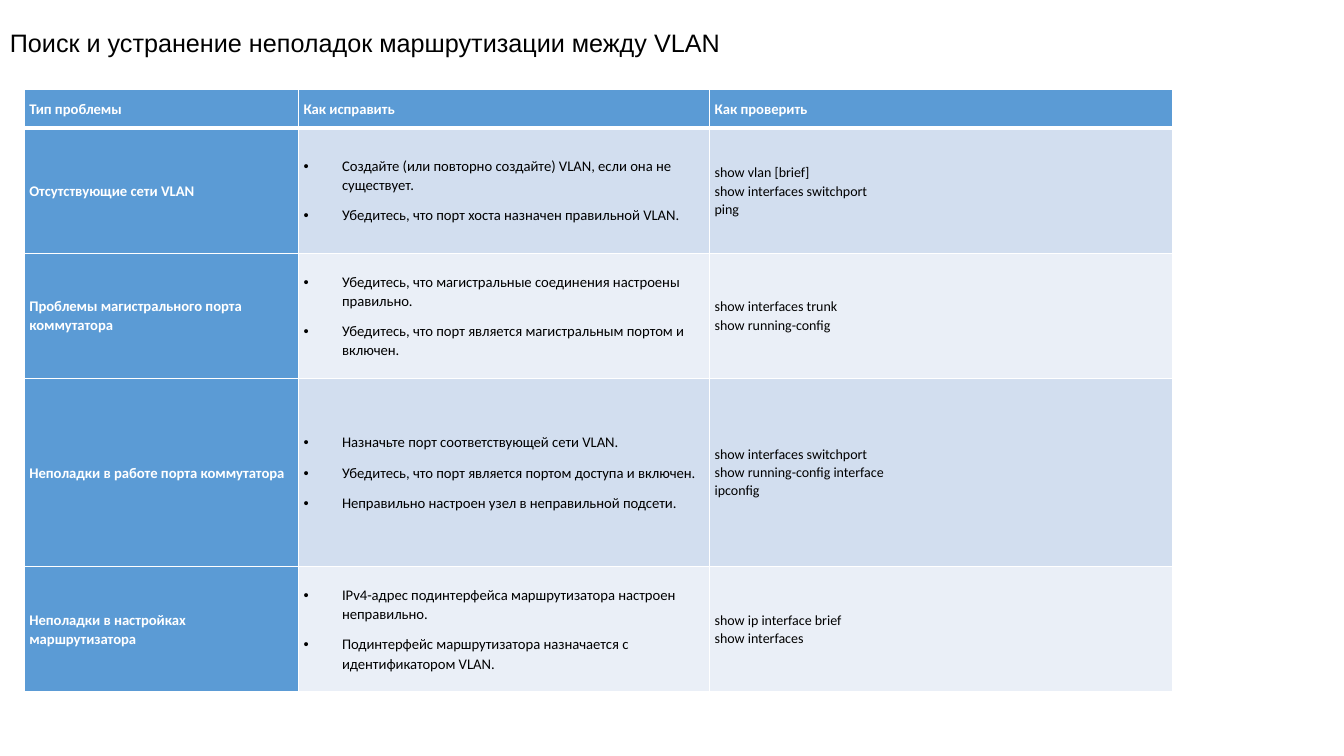
from lxml.etree import SubElement
from pptx import Presentation
from pptx.dml.color import RGBColor
from pptx.enum.text import MSO_ANCHOR as Anchor, MSO_AUTO_SIZE as AutoSize
from pptx.oxml.ns import qn
from pptx.util import Cm, Pt

COLORS = {
    "black": "000000",
    "white": "FFFFFF",
    "head": "5B9BD5",
    "odd": "D2DEEF",
    "even": "EAEFF7",
}
LINE_SPACING = 1.07
COLUMN_WIDTHS = [6.91, 10.36, 11.66]
ROW_HEIGHTS = [0.97, 3.15, 3.15, 4.75, 3.15]

TITLE = "Поиск и устранение неполадок маршрутизации между VLAN"
HEADINGS = ["Тип проблемы", "Как исправить", "Как проверить"]
PROBLEMS = [
    ("Отсутствующие сети VLAN",
     ["Создайте (или повторно создайте) VLAN, если она не существует.",
      "Убедитесь, что порт хоста назначен правильной VLAN."],
     ["show vlan [brief]", "show interfaces switchport", "ping"]),
    ("Проблемы магистрального порта коммутатора",
     ["Убедитесь, что магистральные соединения настроены правильно.",
      "Убедитесь, что порт является магистральным портом и включен."],
     ["show interfaces trunk", "show running-config"]),
    ("Неполадки в работе порта коммутатора",
     ["Назначьте порт соответствующей сети VLAN.",
      "Убедитесь, что порт является портом доступа и включен.",
      "Неправильно настроен узел в неправильной подсети."],
     ["show interfaces switchport", "show running-config interface", "ipconfig"]),
    ("Неполадки в настройках маршрутизатора",
     ["IPv4-адрес подинтерфейса маршрутизатора настроен неправильно.",
      "Подинтерфейс маршрутизатора назначается с идентификатором VLAN."],
     ["show ip interface brief", "show interfaces"]),
]


def add_span(para, text, size, color="black", bold=False, font="Calibri"):
    para.line_spacing = LINE_SPACING
    span = para.add_run()
    span.text = text
    span.font.name = font
    span.font.size = Pt(size)
    span.font.bold = bold
    span.font.color.rgb = RGBColor.from_string(COLORS[color])


def add_bullet(para):
    properties = para._p.get_or_add_pPr()
    properties.set("marL", str(Cm(0.97)))
    properties.set("indent", str(-Cm(0.97)))
    SubElement(properties, qn("a:buFont"), typeface="Arial")
    SubElement(properties, qn("a:buChar"), char="•")
    para.space_after = Pt(8)


def style_cell(cell, fill, top=1, bottom=1):
    cell.vertical_anchor = Anchor.MIDDLE
    cell.margin_left = cell.margin_right = Cm(0.13)
    cell.margin_top = cell.margin_bottom = Cm(0.13)
    # Borders come before the fill in the cell properties
    properties = cell._tc.get_or_add_tcPr()
    for side, width in (("L", 1), ("R", 1), ("T", top), ("B", bottom)):
        line = SubElement(properties, qn(f"a:ln{side}"), w=str(Pt(width)))
        paint = SubElement(line, qn("a:solidFill"))
        SubElement(paint, qn("a:srgbClr"), val=COLORS["white"])
    cell.fill.solid()
    cell.fill.fore_color.rgb = RGBColor.from_string(COLORS[fill])


def fill_label(cell, text):
    add_span(cell.text_frame.paragraphs[0], text, 10.5, "white", bold=True)


def fill_fixes(cell, fixes):
    frame = cell.text_frame
    for index, fix in enumerate(fixes):
        para = frame.add_paragraph() if index else frame.paragraphs[0]
        add_bullet(para)
        add_span(para, fix, 10.5)


def fill_commands(cell, commands):
    para = cell.text_frame.paragraphs[0]
    for index, command in enumerate(commands):
        if index:
            para.add_line_break()
        add_span(para, command, 10)


def add_title(page, left, top, width, height):
    box = page.shapes.add_textbox(left, top, width, height)
    frame = box.text_frame
    frame.word_wrap = True
    frame.auto_size = AutoSize.SHAPE_TO_FIT_TEXT
    add_span(frame.paragraphs[0], TITLE, 18, font="Arial")


def add_problem_table(page, left, top, width, height):
    table = page.shapes.add_table(len(ROW_HEIGHTS), len(COLUMN_WIDTHS),
                                  left, top, width, height).table
    for column, share in zip(table.columns, COLUMN_WIDTHS):
        column.width = int(width * share / sum(COLUMN_WIDTHS))
    for row, share in zip(table.rows, ROW_HEIGHTS):
        row.height = int(height * share / sum(ROW_HEIGHTS))

    # Header row, with a thick line below
    for index, heading in enumerate(HEADINGS):
        cell = table.cell(0, index)
        style_cell(cell, "head", bottom=3)
        fill_label(cell, heading)

    # Problem rows, in alternating bands
    for index, (problem, fixes, commands) in enumerate(PROBLEMS, start=1):
        band = "odd" if index % 2 else "even"
        label, remedy, check = (table.cell(index, number) for number in range(3))
        for cell, fill in ((label, "head"), (remedy, band), (check, band)):
            style_cell(cell, fill, top=3 if index == 1 else 1)
        fill_label(label, problem)
        fill_fixes(remedy, fixes)
        fill_commands(check, commands)


def main():
    deck = Presentation()
    deck.slide_width, deck.slide_height = Cm(33.87), Cm(19.05)
    page = deck.slides.add_slide(deck.slide_layouts[6])
    add_title(page, Cm(0), Cm(0.5), Cm(25.4), Cm(1.1))
    add_problem_table(page, Cm(0.61), Cm(2.26),
                      Cm(sum(COLUMN_WIDTHS)), Cm(sum(ROW_HEIGHTS)))
    deck.save("out.pptx")


if __name__ == "__main__":
    main()
